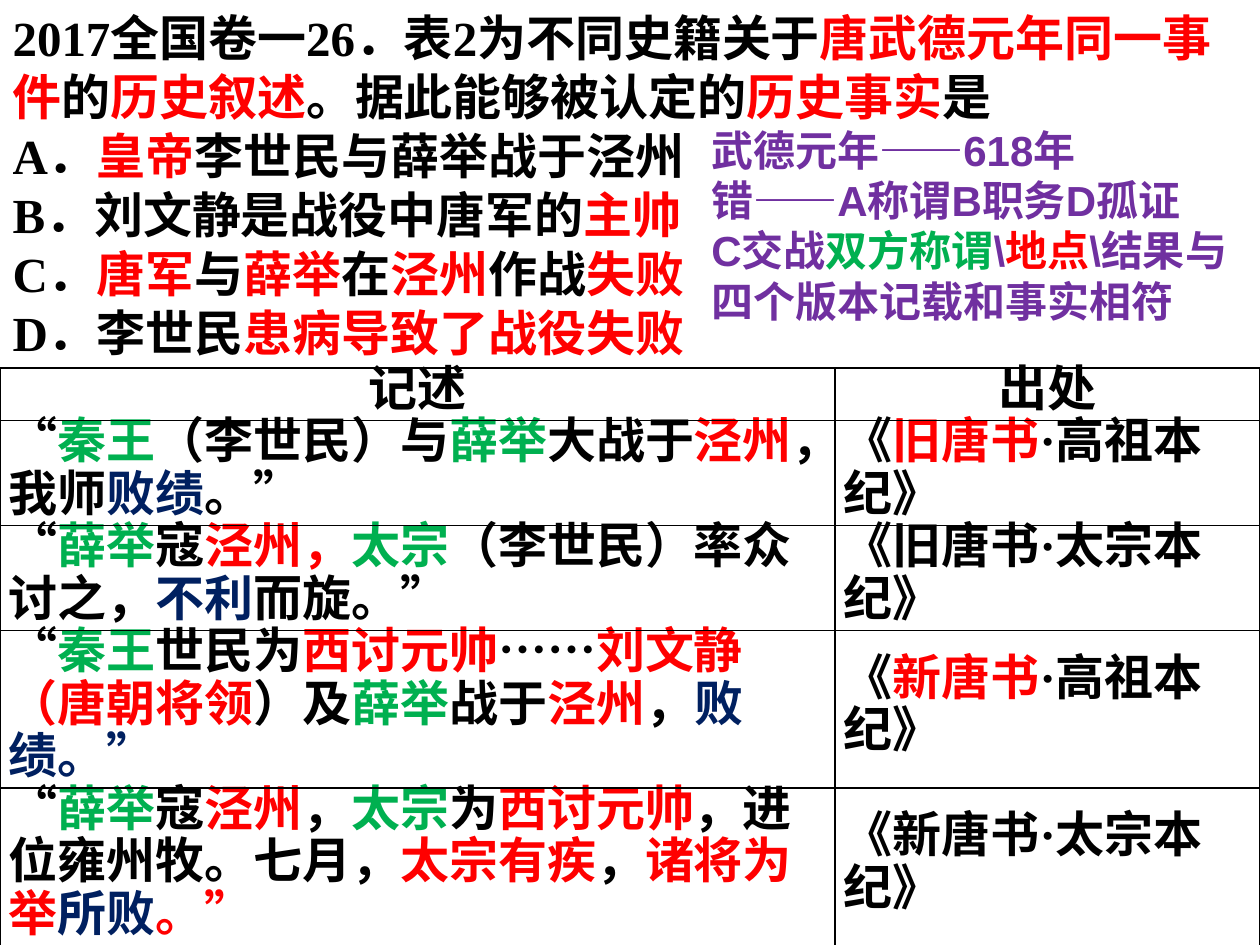
from pptx import Presentation, util as u
from pptx.dml.color import RGBColor
from pptx.enum import lang, text
from pptx.oxml import parse_xml
from pptx.oxml.ns import nsdecls

PX = 914400 / 126
BLACK = RGBColor(0, 0, 0)
RED = RGBColor(0xFF, 0, 0)
GREEN = RGBColor(0, 0xB0, 0x50)
NAVY = RGBColor(0, 0x20, 0x60)
PURPLE = RGBColor(0x70, 0x30, 0xA0)

SERIF = {"name": "Times New Roman", "size": u.Pt(28), "bold": True}
SANS = {"name": "Arial", "size": u.Pt(24), "bold": True}
LINE = 52  # height of one 30 pt table line

# A paragraph is a list of runs: plain text, or (text, colour).
QUESTION = [
    ["2017全国卷一26．表2为不同史籍关于", ("唐武德元年同一事件", RED), "的",
     ("历史叙述", RED), "。据此能够被认定的", ("历史事实", RED), "是"],
    ["A．", ("皇帝", RED), "李世民与薛举战于泾州"],
    ["B．刘文静是战役中唐军的", ("主帅", RED)],
    ["C．", ("唐军", RED), "与", ("薛举", RED), "在", ("泾州", RED), "作战", ("失败", RED)],
    ["D．李世民", ("患病导致了战役失败", RED)],
]
NOTES = [
    ["武德元年——618年"],
    ["错——A称谓B职务D孤证"],
    ["C交战", ("双方称谓", GREEN), "\\", ("地点", RED), "\\结果与四个版本记载和事实相符"],
]
# Lines in the row, account, source, anchor of the source
RECORDS = [
    (1, ["记述"], ["出处"], "TOP"),
    (2, ["“", ("秦王", GREEN), "（李世民）与", ("薛举", GREEN), "大战于", ("泾州", RED),
         "，我师", ("败绩", NAVY), "。”"],
     ["《", ("旧唐书", RED), "·高祖本纪》"], "TOP"),
    (2, ["“", ("薛举", GREEN), "寇", ("泾州，", RED), ("太宗", GREEN),
         "（李世民）率众讨之，", ("不利", NAVY), "而旋。”"],
     ["《旧唐书·太宗本纪》"], "TOP"),
    (3, ["“", ("秦王", GREEN), "世民为", ("西讨元帅", RED), "……",
         ("刘文静（唐朝将领", RED), "）及", ("薛举", GREEN), "战于", ("泾州", RED),
         "，", ("败绩。”", NAVY)],
     ["《", ("新唐书", RED), "·高祖本纪》"], "MIDDLE"),
    (3, ["“", ("薛举", GREEN), "寇", ("泾州", RED), "，", ("太宗", GREEN), "为",
         ("西讨元帅", RED), "，进位雍州牧。七月，", ("太宗有疾", RED), "，",
         ("诸将为举", RED), ("所败", NAVY), ("。”", RED)],
     ["《新唐书·太宗本纪》"], "MIDDLE"),
]


def px(value):
    return u.Emu(round(value * PX))


def apply(target, values):
    for name, value in values.items():
        setattr(target, name, value)


def write(frame, paragraphs, font, colour=BLACK, layout=None):
    """Fill a text frame; colour is used for runs that name none."""
    for index, runs in enumerate(paragraphs):
        paragraph = frame.paragraphs[0] if index == 0 else frame.add_paragraph()
        apply(paragraph, layout or {})
        for item in runs:
            words, shade = (item, colour) if isinstance(item, str) else item
            run = paragraph.add_run()
            run.text = words
            apply(run.font, font)
            run.font.language_id = lang.MSO_LANGUAGE_ID.SIMPLIFIED_CHINESE
            run.font.color.rgb = shade


def add_question(slide):
    slide.shapes.title.element.getparent().remove(slide.shapes.title.element)
    body = slide.placeholders[1]
    apply(body, {"left": 0, "top": 0, "width": px(1260), "height": px(369)})
    apply(body.text_frame, {"word_wrap": True,
                            "auto_size": text.MSO_AUTO_SIZE.SHAPE_TO_FIT_TEXT,
                            "vertical_anchor": text.MSO_ANCHOR.MIDDLE})
    write(body.text_frame, QUESTION, SERIF, layout={"space_before": u.Pt(0)})
    for paragraph in body.text_frame.paragraphs:
        properties = paragraph._p.get_or_add_pPr()
        properties.set("marL", "0")
        properties.set("indent", "0")
        properties.append(parse_xml(f"<a:buNone {nsdecls('a')}/>"))


def add_notes(slide):
    box = slide.shapes.add_textbox(px(699), px(118), px(561), px(217))
    apply(box.text_frame, {"word_wrap": True,
                           "auto_size": text.MSO_AUTO_SIZE.SHAPE_TO_FIT_TEXT})
    write(box.text_frame, NOTES, SANS, PURPLE)


def add_borders(cell):
    properties = cell._tc.get_or_add_tcPr()
    for index, side in enumerate("LRTB"):
        properties.insert(index, parse_xml(
            f'<a:ln{side} {nsdecls("a")} w="{u.Pt(1)}"><a:solidFill>'
            f'<a:srgbClr val="{BLACK}"/></a:solidFill></a:ln{side}>'))


def add_records(slide):
    height = LINE * sum(record[0] for record in RECORDS)
    table = slide.shapes.add_table(len(RECORDS), 2, 0, px(368), px(1260), px(height)).table
    apply(table, {"first_row": False, "horz_banding": False})
    for column, width in zip(table.columns, (835, 425)):
        column.width = px(width)
    for index, (lines, account, source, anchor) in enumerate(RECORDS):
        table.rows[index].height = px(LINE * lines)
        align = text.PP_ALIGN.LEFT if index else text.PP_ALIGN.CENTER
        for cell, runs, place in zip(table.rows[index].cells, (account, source),
                                     ("TOP", anchor)):
            apply(cell, {"margin_left": px(9), "margin_right": px(9),
                         "margin_top": 0, "margin_bottom": 0,
                         "vertical_anchor": text.MSO_ANCHOR[place]})
            cell.fill.background()
            add_borders(cell)
            write(cell.text_frame, [runs], SERIF,
                  layout={"alignment": align, "line_spacing": u.Pt(30)})


def main():
    presentation = Presentation()
    apply(presentation, {"slide_width": px(1260), "slide_height": px(945)})
    slide = presentation.slides.add_slide(presentation.slide_layouts[1])
    add_records(slide)
    add_question(slide)
    add_notes(slide)
    presentation.save("out.pptx")


if __name__ == "__main__":
    main()
